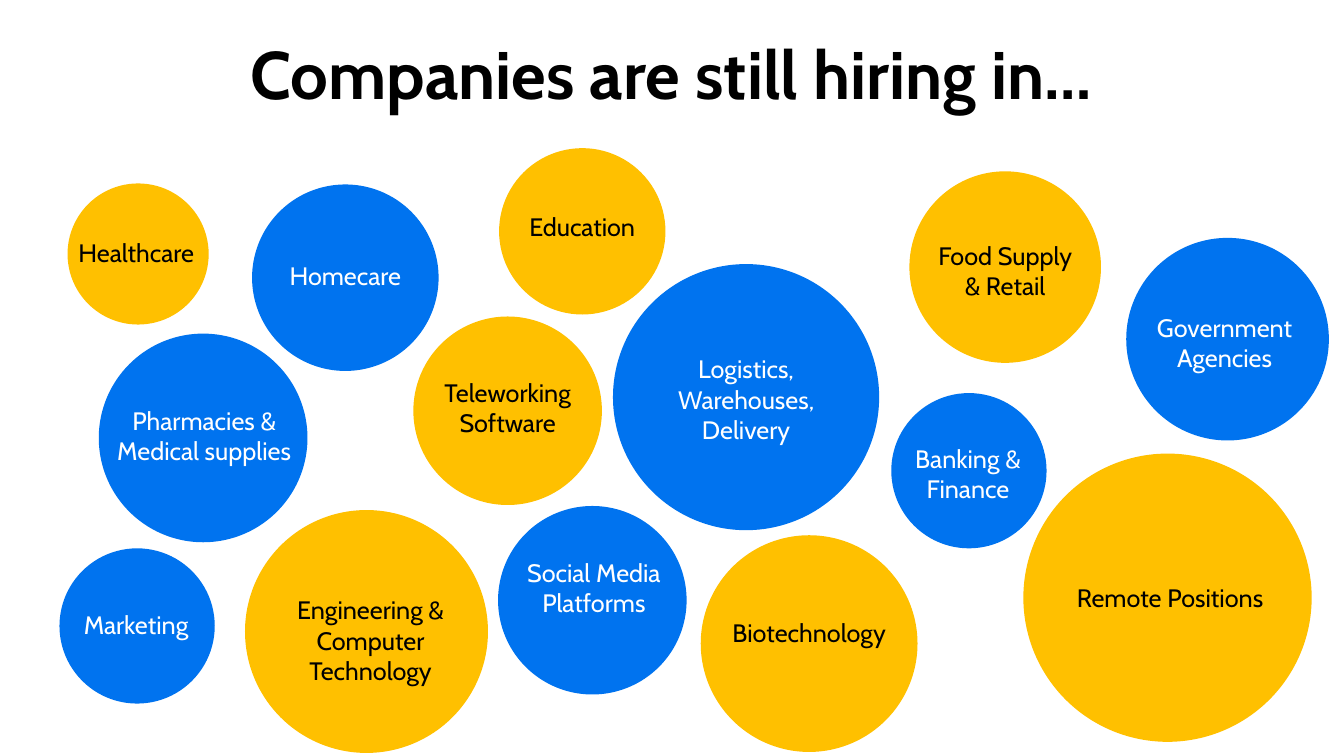
from dataclasses import dataclass

from pptx import Presentation
from pptx.dml.color import RGBColor
from pptx.enum.shapes import MSO_SHAPE
from pptx.enum.text import MSO_ANCHOR, MSO_AUTO_SIZE, PP_ALIGN
from pptx.util import Inches, Pt


@dataclass(frozen=True)
class Theme:
    font: str = "Cabin"
    blue: RGBColor = RGBColor(0x00, 0x73, 0xEF)
    yellow: RGBColor = RGBColor(0xFF, 0xC0, 0x00)
    black: RGBColor = RGBColor(0, 0, 0)
    white: RGBColor = RGBColor(255, 255, 255)
    title_size: Pt = Pt(48)
    label_size: Pt = Pt(18)


theme = Theme()


def write(tf, text, size, color, bold=False, align=PP_ALIGN.CENTER):
    tf.word_wrap = True
    tf.auto_size = MSO_AUTO_SIZE.NONE
    tf.vertical_anchor = MSO_ANCHOR.TOP
    p = tf.paragraphs[0]
    p.text = text
    p.alignment = align
    p.font.name = theme.font
    p.font.size = size
    p.font.bold = bold
    p.font.color.rgb = color


prs = Presentation()
prs.slide_width, prs.slide_height = Inches(13.33), Inches(7.5)
slide = prs.slides.add_slide(prs.slide_layouts[5])

title = slide.shapes.title
title.left, title.top = Inches(0), Inches(0.27)
title.width, title.height = Inches(13.32), Inches(0.91)
write(title.text_frame, "Companies are still hiring in…", theme.title_size, theme.black, bold=True)

# label, fill, circle (left, top, diameter), text box (left, top, width, height)
bubbles = [
    ("Social Media Platforms", theme.blue, (4.94, 5.02, 1.87), (5.12, 5.48, 1.54, 1.01)),
    ("Pharmacies & Medical supplies", theme.blue, (0.98, 3.31, 2.07), (0.98, 3.97, 2.09, 0.71)),
    ("Marketing", theme.blue, (0.59, 5.44, 1.54), (0.62, 6, 1.46, 0.4)),
    ("Government Agencies", theme.blue, (11.17, 2.36, 2.01), (11.17, 3.05, 1.95, 0.71)),
    ("Logistics, Warehouses, Delivery", theme.blue, (6.08, 2.62, 2.64), (6.21, 3.46, 2.38, 1.01)),
    ("Teleworking Software", theme.yellow, (4.1, 3.14, 1.87), (4.16, 3.69, 1.75, 0.71)),
    ("Engineering & Computer Technology", theme.yellow, (2.43, 5.06, 2.41), (2.52, 5.85, 2.31, 1.01)),
    ("Biotechnology", theme.yellow, (6.95, 5.31, 2.15), (6.98, 6.08, 2.09, 0.4)),
    ("Remote Positions", theme.yellow, (10.15, 4.5, 2.86), (10.2, 5.73, 2.81, 0.4)),
    ("Banking & Finance", theme.blue, (8.84, 3.9, 1.54), (8.84, 4.35, 1.52, 0.71)),
    ("Healthcare", theme.yellow, (0.67, 1.82, 1.4), (0.68, 2.31, 1.65, 0.4)),
    ("Homecare", theme.blue, (2.5, 1.83, 1.85), (2.5, 2.53, 1.85, 0.4)),
    ("Food Supply & Retail", theme.yellow, (9.02, 1.7, 1.9), (9.14, 2.33, 1.66, 0.71)),
    ("Education", theme.yellow, (4.95, 1.47, 1.65), (5.01, 2.05, 1.53, 0.4)),
]

for label, fill, (left, top, diameter), box in bubbles:
    sp = slide.shapes.add_shape(
        MSO_SHAPE.OVAL, Inches(left), Inches(top), Inches(diameter), Inches(diameter)
    )
    sp.shadow.inherit = False
    sp.fill.solid()
    sp.fill.fore_color.rgb = fill
    sp.line.fill.background()

    color = theme.white if fill == theme.blue else theme.black
    align = PP_ALIGN.LEFT if label == "Healthcare" else PP_ALIGN.CENTER
    tf = slide.shapes.add_textbox(*map(Inches, box)).text_frame
    write(tf, label, theme.label_size, color, align=align)

prs.save("out.pptx")
